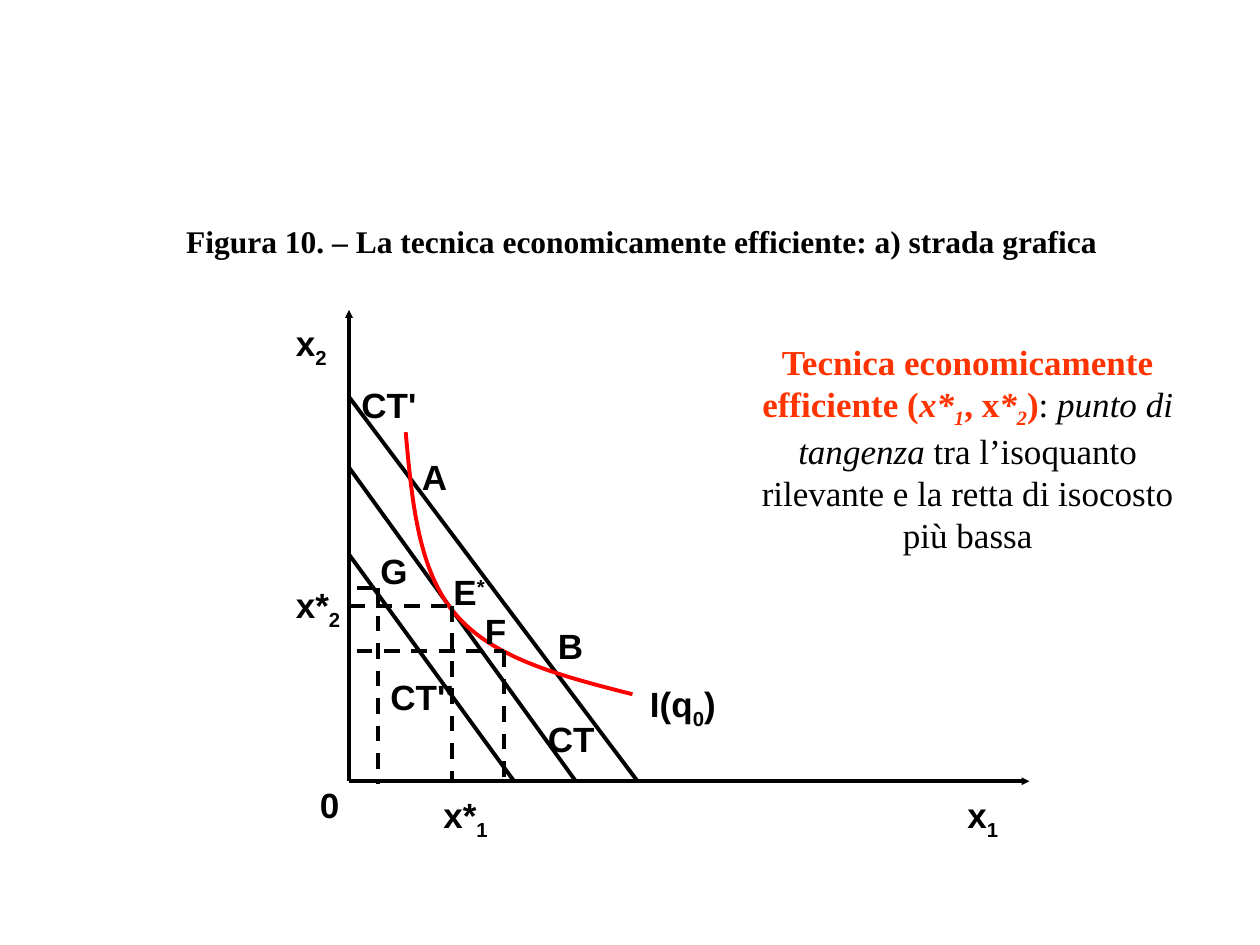
from dataclasses import dataclass

import pptx
import pptx.dml.color
import pptx.enum.dml
import pptx.enum.shapes
import pptx.enum.text
import pptx.oxml.ns
import pptx.oxml.xmlchemy
import pptx.util

PX = 9144
BLACK, RED, ORANGE = "000000", "FF0000", "FF3300"
ORIGIN_X, ORIGIN_Y = 277, 620
SUB, SUPER = -25, 30
LEFT = pptx.enum.text.PP_ALIGN.LEFT
CENTER = pptx.enum.text.PP_ALIGN.CENTER
TOP = pptx.enum.text.MSO_ANCHOR.TOP
MIDDLE = pptx.enum.text.MSO_ANCHOR.MIDDLE


@dataclass
class Run:
    text: str
    baseline: int = 0
    bold: bool = True
    italic: bool = False
    color: str = BLACK


@dataclass
class Box:
    left: int
    top: int
    width: int
    height: int
    runs: list[Run]
    font: str = "Arial"
    size: int = 20
    spacing: float = 0.96
    align: pptx.enum.text.PP_ALIGN = LEFT
    anchor: pptx.enum.text.MSO_ANCHOR = TOP


@dataclass
class Line:
    x1: int
    y1: int
    x2: int
    y2: int
    dashed: bool = False
    arrow: bool = False


AXES = [
    Line(ORIGIN_X, ORIGIN_Y, 817, ORIGIN_Y, arrow=True),
    Line(ORIGIN_X, ORIGIN_Y, ORIGIN_X, 246, arrow=True),
]
ISOCOSTS = [
    Line(ORIGIN_X, y, x, ORIGIN_Y) for y, x in [(315, 506), (371, 457), (440, 408)]
]
GUIDES = [
    line
    for start, x, y, bottom in [(283, 400, 517, 619), (277, 359, 481, 620), (283, 300, 467, 622)]
    for line in (Line(start, y, x, y, dashed=True), Line(x, y, x, bottom, dashed=True))
]
ISOQUANT = [(322, 343), (327, 398), (332, 454), (362, 488), (392, 523), (447, 537), (502, 551)]

TITLE = Box(
    138, 170, 764, 47,
    [Run("Figura 10. – La tecnica economicamente efficiente: a) strada grafica")],
    font="Times New Roman", size=18, spacing=0.9, anchor=MIDDLE,
)
LABELS = [
    Box(758, 625, 66, 41, [Run("x"), Run("1", SUB)]),
    Box(225, 250, 66, 41, [Run("x"), Run("2", SUB)]),
    Box(244, 619, 82, 56, [Run("0")]),
    Box(325, 359, 98, 55, [Run("A")]),
    Box(433, 493, 66, 56, [Run("B")]),
    Box(277, 302, 82, 55, [Run("CT'")]),
    Box(506, 537, 114, 69, [Run("I(q"), Run("0", SUB), Run(")")]),
    Box(425, 567, 82, 55, [Run("CT")]),
    Box(375, 481, 49, 42, [Run("F")]),
    Box(300, 533, 82, 69, [Run("CT''")]),
    Box(350, 450, 65, 56, [Run("E"), Run("*", SUPER)]),
    Box(225, 458, 66, 58, [Run("x*"), Run("2", SUB)]),
    Box(342, 625, 66, 58, [Run("x*"), Run("1", SUB)]),
    Box(292, 433, 66, 58, [Run("G")]),
]
DEFINITION = Box(
    579, 265, 378, 145,
    [
        Run("Tecnica economicamente efficiente (", color=ORANGE),
        Run("x*", italic=True, color=ORANGE),
        Run("1", SUB, italic=True, color=ORANGE),
        Run(", x", color=ORANGE),
        Run("*", italic=True, color=ORANGE),
        Run("2", SUB, italic=True, color=ORANGE),
        Run(")", color=ORANGE),
        Run(": ", bold=False),
        Run("punto di tangenza ", bold=False, italic=True),
        Run("tra l’isoquanto rilevante e la retta di isocosto più bassa", bold=False),
    ],
    font="Times New Roman", spacing=1.0, align=CENTER,
)


def rgb(color: str) -> pptx.dml.color.RGBColor:
    """Turn a hex string into a colour."""
    return pptx.dml.color.RGBColor.from_string(color)


def draw_box(s, box: Box) -> None:
    """Draw a text box run by run."""
    sp = s.shapes.add_textbox(box.left * PX, box.top * PX, box.width * PX, box.height * PX)
    tf = sp.text_frame
    tf.word_wrap = True
    tf.vertical_anchor = box.anchor
    p = tf.paragraphs[0]
    p.alignment = box.align
    p.line_spacing = box.spacing
    for run in box.runs:
        r = p.add_run()
        r.text = run.text
        r.font.name = box.font
        r.font.size = pptx.util.Pt(box.size)
        r.font.bold = run.bold
        r.font.italic = run.italic
        r.font.color.rgb = rgb(run.color)
        if run.baseline:
            r._r.get_or_add_rPr().set("baseline", str(run.baseline * 1000))


def set_line(sp, color: str) -> None:
    """Give a shape or connector the common line style."""
    sp.line.color.rgb = rgb(color)
    sp.line.width = pptx.util.Pt(2.25)


def draw_line(s, line: Line) -> None:
    """Draw a straight line, dashed or with an arrowhead if asked."""
    sp = s.shapes.add_connector(
        pptx.enum.shapes.MSO_CONNECTOR.STRAIGHT,
        line.x1 * PX, line.y1 * PX, line.x2 * PX, line.y2 * PX,
    )
    set_line(sp, BLACK)
    if line.dashed:
        sp.line.dash_style = pptx.enum.dml.MSO_LINE.DASH
    if line.arrow:
        tail = pptx.oxml.xmlchemy.OxmlElement("a:tailEnd")
        for name, value in (("type", "triangle"), ("w", "sm"), ("len", "sm")):
            tail.set(name, value)
        sp.line._get_or_add_ln().append(tail)
    sp._element.spPr.append(pptx.oxml.xmlchemy.OxmlElement("a:effectLst"))


def draw_curve(s, points: list[tuple[int, int]], color: str) -> None:
    """Draw an open Bezier curve from a start and triples of control points."""
    builder = s.shapes.build_freeform(*points[0], scale=PX)
    builder.add_line_segments(points[1:], close=False)
    sp = builder.convert_to_shape()
    sp.shadow.inherit = False
    sp.fill.background()
    set_line(sp, color)
    segments = list(sp._element.iter(pptx.oxml.ns.qn("a:lnTo")))
    for i in range(0, len(segments), 3):
        curve = pptx.oxml.xmlchemy.OxmlElement("a:cubicBezTo")
        segments[i].addprevious(curve)
        for segment in segments[i:i + 3]:
            curve.append(segment[0])
            segment.getparent().remove(segment)


def main() -> None:
    """Build the slide and save it."""
    prs = pptx.Presentation()
    prs.slide_width, prs.slide_height = 1000 * PX, 750 * PX
    s = prs.slides.add_slide(prs.slide_layouts[6])
    draw_box(s, TITLE)
    for line in AXES + ISOCOSTS:
        draw_line(s, line)
    draw_curve(s, ISOQUANT, RED)
    for line in GUIDES:
        draw_line(s, line)
    for box in LABELS + [DEFINITION]:
        draw_box(s, box)
    prs.save("out.pptx")


if __name__ == "__main__":
    main()
